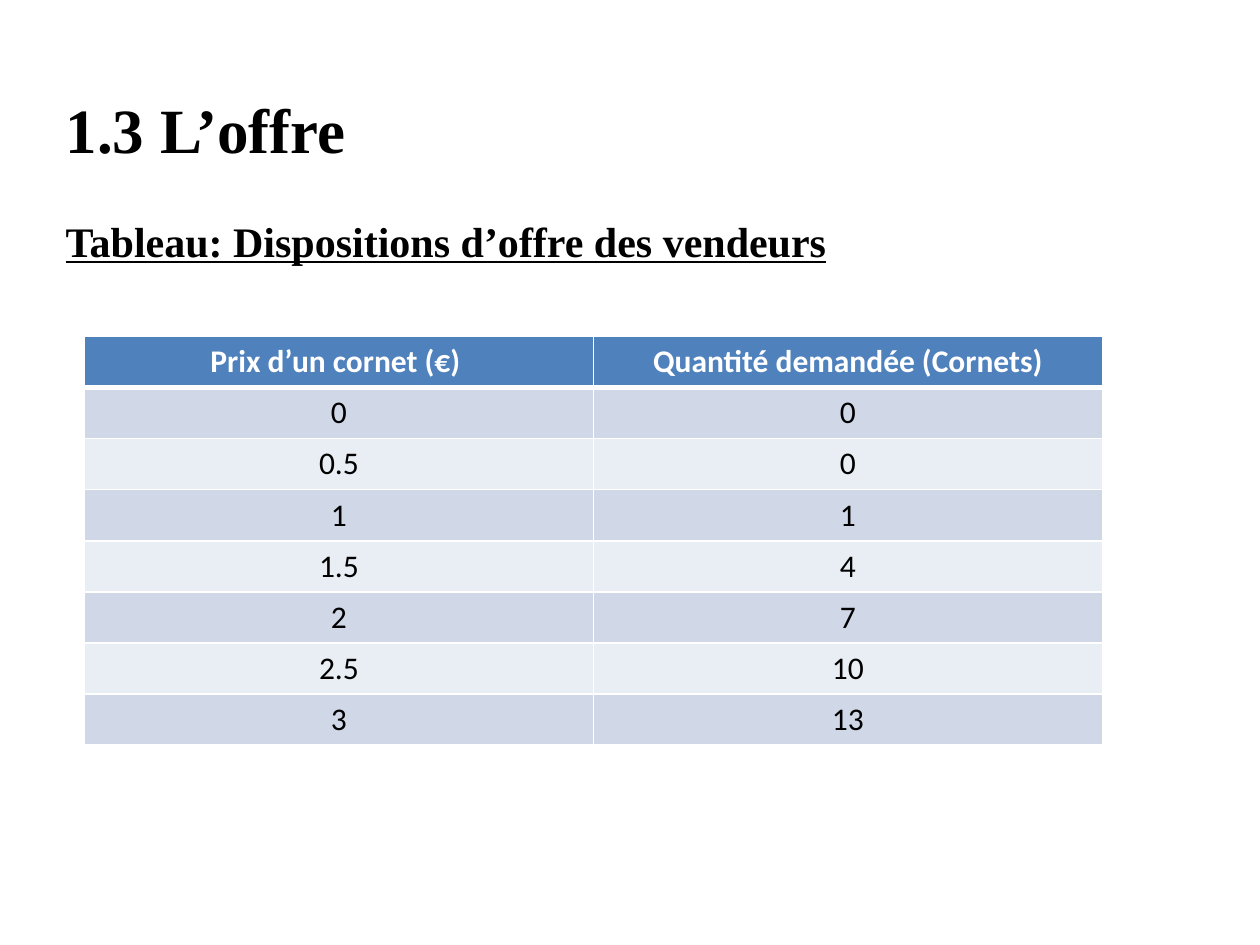
import pptx
import pptx.dml.color
import pptx.enum.text
import pptx.util
from lxml import etree
from pptx.oxml.ns import qn
from pptx.util import Inches, Pt

HEADER_FILL = "4F81BD"
BAND_FILLS = ("D0D8E8", "E9EDF4")
WHITE, BLACK = "FFFFFF", "000000"

SUPPLY_ROWS = [
    ("Prix d’un cornet (€) ", "Quantité demandée (Cornets)"),
    ("0", "0"),
    ("0.5", "0"),
    ("1", "1"),
    ("1.5", "4"),
    ("2", "7"),
    ("2.5", "10"),
    ("3", "13"),
]


def color(hex_string):
    return pptx.dml.color.RGBColor.from_string(hex_string)


def format_runs(para, font_name, size, hex_color, bold, underline=False):
    for span in para.runs:
        font = span.font
        font.name, font.size = font_name, Pt(size)
        font.bold, font.underline = bold, underline
        font.color.rgb = color(hex_color)


def add_title(slide, heading, subtitle):
    box = slide.shapes.title
    box.left, box.top = Inches(0.42), Inches(0.42)
    box.width, box.height = Inches(9), Inches(1.92)
    frame = box.text_frame
    frame.text = f"{heading}\n{subtitle}"
    frame.word_wrap = True
    frame.auto_size = pptx.enum.text.MSO_AUTO_SIZE.NONE
    frame.vertical_anchor = pptx.enum.text.MSO_ANCHOR.MIDDLE
    frame.margin_top = Inches(0.12)
    for para, size, underline in zip(frame.paragraphs, (36, 24), (False, True)):
        para.alignment = pptx.enum.text.PP_ALIGN.LEFT
        format_runs(para, "Times New Roman", size, BLACK, True, underline)
    frame.paragraphs[1].space_before = Pt(28)


def set_borders(cell, top, bottom):
    """Draw white cell borders; top and bottom are widths in points."""
    properties = cell._tc.get_or_add_tcPr()
    for tag, width in (("a:lnL", 1), ("a:lnR", 1), ("a:lnT", top), ("a:lnB", bottom)):
        line = etree.SubElement(properties, qn(tag), w=str(Pt(width)))
        fill = etree.SubElement(line, qn("a:solidFill"))
        etree.SubElement(fill, qn("a:srgbClr"), val=WHITE)


def format_cell(cell, row_index):
    is_header = row_index == 0
    set_borders(cell, 3 if row_index == 1 else 1, 3 if is_header else 1)
    cell.fill.solid()
    cell.fill.fore_color.rgb = color(
        HEADER_FILL if is_header else BAND_FILLS[(row_index - 1) % 2])
    para = cell.text_frame.paragraphs[0]
    para.alignment = pptx.enum.text.PP_ALIGN.CENTER
    format_runs(para, "Calibri", 18, WHITE if is_header else BLACK, is_header)


def add_supply_table(slide, rows):
    frame = slide.shapes.add_table(
        len(rows), len(rows[0]),
        Inches(0.67), Inches(2.67), Inches(8.08), Inches(3.24))
    for row_index, values in enumerate(rows):
        for column_index, value in enumerate(values):
            cell = frame.table.cell(row_index, column_index)
            cell.text_frame.text = value
            format_cell(cell, row_index)


def main():
    deck = pptx.Presentation()
    deck.slide_width, deck.slide_height = Inches(10), Inches(7.5)
    title_only = deck.slide_layouts[5]
    slide = deck.slides.add_slide(title_only)
    add_title(slide, "1.3 L’offre", "Tableau: Dispositions d’offre des vendeurs")
    add_supply_table(slide, SUPPLY_ROWS)
    deck.save("out.pptx")


if __name__ == "__main__":
    main()
